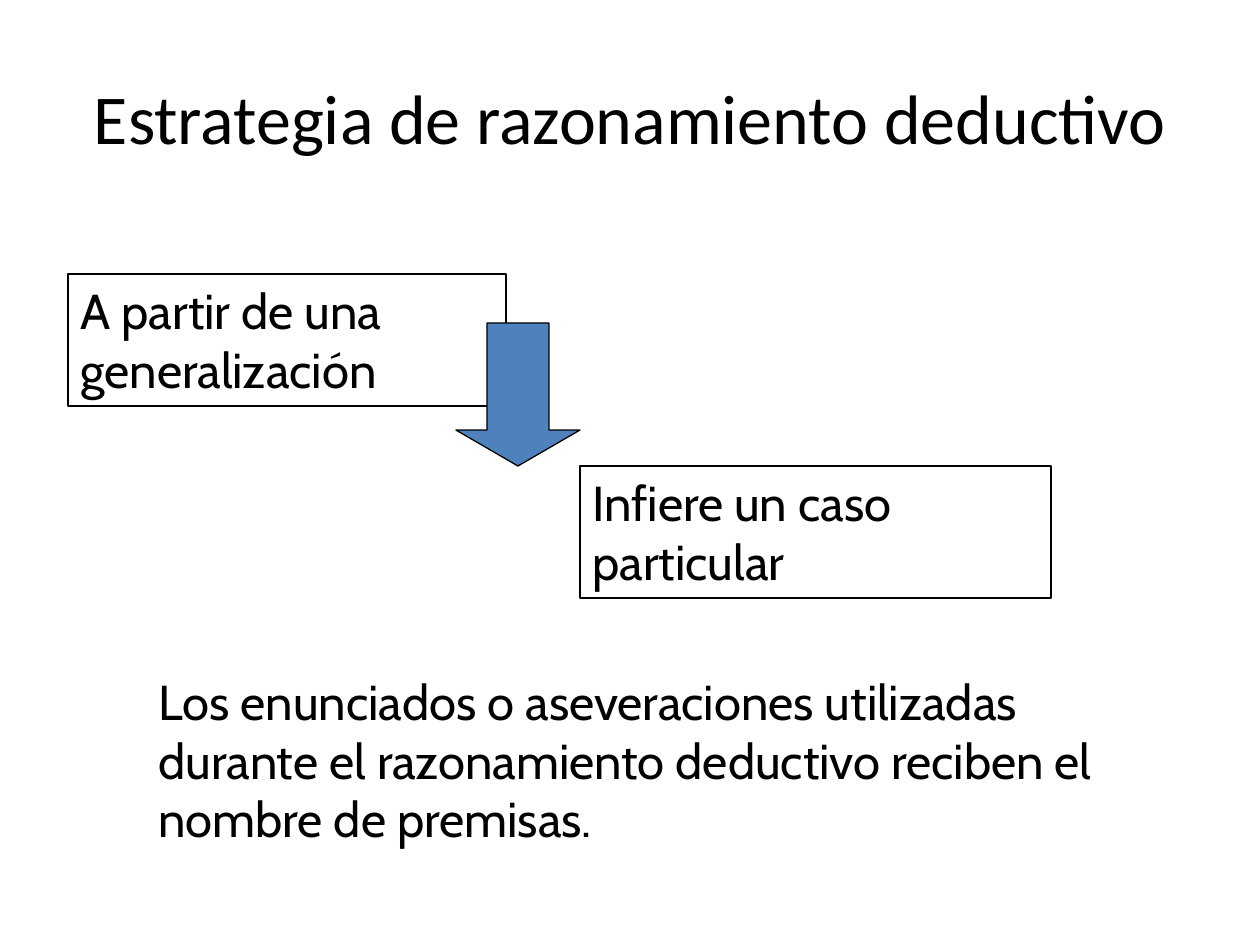
from pptx import Presentation
from pptx.dml.color import RGBColor
from pptx.enum.shapes import MSO_SHAPE
from pptx.enum.text import MSO_ANCHOR, PP_ALIGN
from pptx.util import Emu, Pt

SCALE = 914400 / 126  # EMU per px
HUES = {"ink": "000000", "arrow": "4F81BD"}


def px(*nums):
    return [Emu(round(n * SCALE)) for n in nums]


def hue(name):
    return RGBColor.from_string(HUES[name])


class Board:
    font, size, edge = "Cabin", 28, 0.75

    def __init__(self, slide):
        self.slide = slide

    def label(self, shape, text, font=None, size=None,
              align=PP_ALIGN.LEFT, anchor=MSO_ANCHOR.TOP):
        frame = shape.text_frame
        frame.word_wrap = True
        frame.vertical_anchor = anchor
        frame.text = text
        para = frame.paragraphs[0]
        para.alignment = align
        para.font.name = font or self.font
        para.font.size = Pt(size or self.size)
        para.font.color.rgb = hue("ink")

    def title(self, text, *box):
        shape = self.slide.shapes.title
        shape.left, shape.top, shape.width, shape.height = px(*box)
        self.label(shape, text, "Calibri", 40,
                   PP_ALIGN.CENTER, MSO_ANCHOR.MIDDLE)

    def shape(self, kind, *box):
        shape = self.slide.shapes.add_shape(kind, *px(*box))
        shape.shadow.inherit = False
        shape.line.color.rgb = hue("ink")
        shape.line.width = Pt(self.edge)
        return shape

    def box(self, text, *box):
        shape = self.shape(MSO_SHAPE.RECTANGLE, *box)
        shape.fill.background()
        self.label(shape, text)

    def arrow(self, *box):
        shape = self.shape(MSO_SHAPE.DOWN_ARROW, *box)
        shape.fill.solid()
        shape.fill.fore_color.rgb = hue("arrow")
        shape.adjustments[1] = 0.29

    def text(self, text, *box):
        self.label(self.slide.shapes.add_textbox(*px(*box)), text)


def main():
    deck = Presentation()
    deck.slide_width, deck.slide_height = px(1260, 945)
    board = Board(deck.slides.add_slide(deck.slide_layouts[5]))

    board.title("Estrategia de razonamiento deductivo", 63, 38, 1134, 157)

    # From the general rule down to the single case
    board.box("A partir de una generalización", 68, 274, 438, 132)
    board.box("Infiere un caso particular", 580, 466, 471, 132)
    board.arrow(456, 323, 124, 143)

    # Closing note
    board.text("Los enunciados o aseveraciones utilizadas durante el "
               "razonamiento deductivo reciben el nombre de premisas.",
               146, 665, 1051, 189)

    deck.save("out.pptx")


if __name__ == "__main__":
    main()
